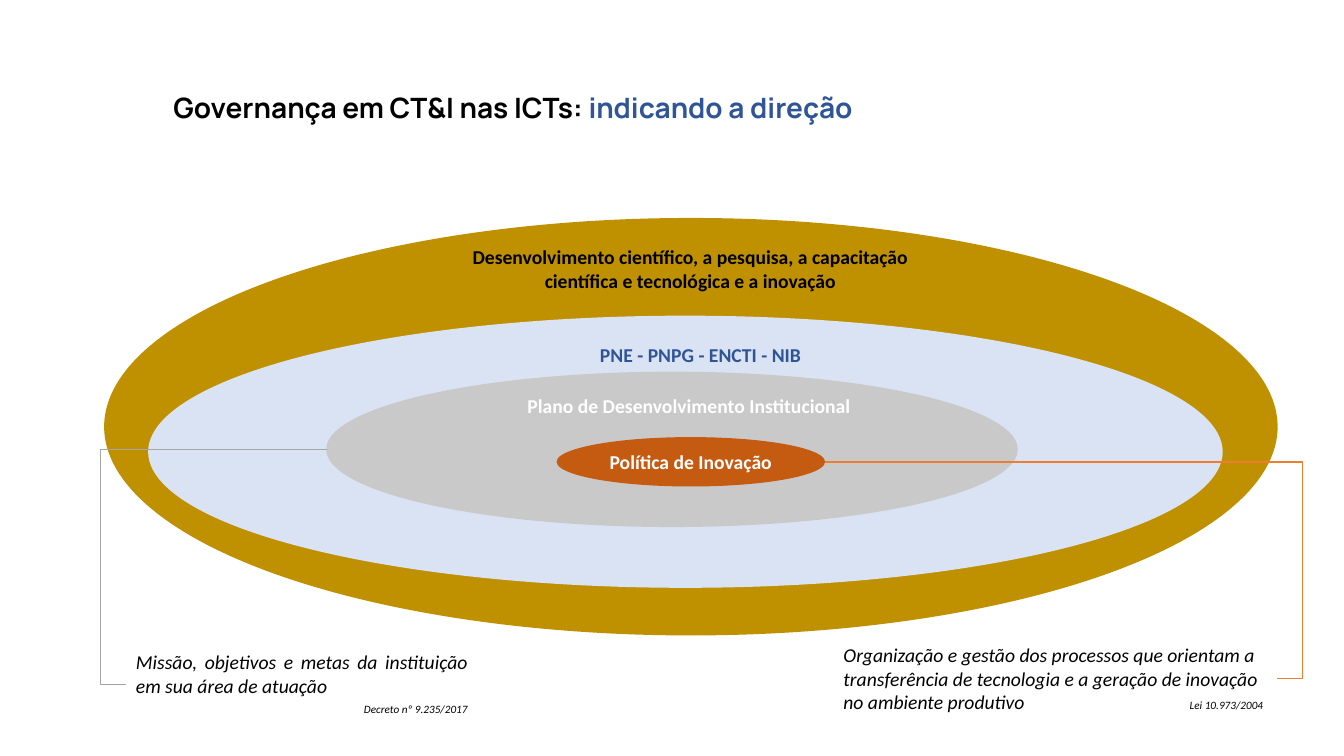
from lxml.etree import SubElement
from pptx import Presentation
from pptx.dml.color import RGBColor
from pptx.enum.shapes import MSO_CONNECTOR as Link, MSO_SHAPE as Shape
from pptx.enum.text import MSO_ANCHOR as Anchor, PP_ALIGN as Align
from pptx.oxml.ns import qn
from pptx.util import Pt


def color(hex_code):
    return RGBColor.from_string(hex_code)


def write(paragraph, runs, layout):
    for key, value in layout.items():
        setattr(paragraph, key, value)
    for words, hex_code, style in runs:
        run = paragraph.add_run()
        run.text = words
        run.font.color.rgb = color(hex_code)
        for key, value in style.items():
            setattr(run.font, key, value)


prs = Presentation()
prs.slide_width, prs.slide_height = Pt(960), Pt(540)
slide = prs.slides.add_slide(prs.slide_layouts[6])
shapes = slide.shapes

heading = {"name": "Manrope", "size": Pt(20), "bold": True}
label = {"name": "Calibri", "size": Pt(14), "bold": True}
note = {"name": "Calibri", "size": Pt(14), "italic": True}
citation = {"name": "Calibri", "size": Pt(8), "italic": True}
centered = {"alignment": Align.CENTER}
black, white, blue = "000000", "FFFFFF", "2F5597"

levels = [
    (74.4, 155.7, 838.2, 298.2, "BF9000"),
    (105.8, 225.5, 767.6, 194.4, "DAE3F3"),
    (233, 265.5, 494, 111, "C9C9C9"),
    (397.6, 312.2, 191.8, 35.3, "C55A11"),
]
for left, top, width, height, fill in levels:
    level = shapes.add_shape(Shape.OVAL, Pt(left), Pt(top), Pt(width), Pt(height))
    level.shadow.inherit = False
    level.fill.solid()
    level.fill.fore_color.rgb = color(fill)
    level.line.fill.background()

policy = level.text_frame
policy.vertical_anchor = Anchor.MIDDLE
write(policy.paragraphs[0], [("Política de Inovação", white, label)], centered)

links = [
    (233.3, 321.2, 90, 488.9, "A5A5A5", 112600),
    (589.4, 330, 912.4, 484.6, "ED7D31", 105600),
]
for x1, y1, x2, y2, stroke, bend in links:
    link = shapes.add_connector(Link.ELBOW, Pt(x1), Pt(y1), Pt(x2), Pt(y2))
    link.line.color.rgb = color(stroke)
    link.line.width = Pt(1)
    properties = link._element.spPr
    guides = properties.find(qn("a:prstGeom")).get_or_add_avLst()
    SubElement(guides, qn("a:gd"), name="adj1", fmla=f"val {bend}")
    SubElement(properties, qn("a:effectLst"))

texts = [
    (40.3, 64.1, 652.3, 43.2, [(
        [("Governança em CT&I nas ICTs: ", black, heading),
         ("indicando a direção", blue, heading)],
        {"alignment": Align.CENTER, "line_spacing": 0.9})]),
    (324, 171.4, 338.4, 41, [(
        [("Desenvolvimento científico, a pesquisa, a capacitação "
          "científica e tecnológica e a inovação", black, label)], centered)]),
    (250.6, 241.2, 499.7, 24.5, [(
        [("PNE - PNPG - ENCTI - NIB", blue, label)], centered)]),
    (366.5, 277.9, 251.3, 24.5, [(
        [("Plano de Desenvolvimento Institucional", white, label)], centered)]),
    (90, 460.8, 251.3, 54.7, [
        ([("Missão, objetivos e metas da instituição em sua área de atuação",
           black, note)],
         {"alignment": Align.JUSTIFY, "space_after": Pt(4)}),
        ([("Decreto nº 9.235/2017", black, citation)],
         {"alignment": Align.RIGHT, "space_after": Pt(4)})]),
    (595.4, 455.8, 316.8, 58.3, [(
        [("Organização e gestão dos processos que orientam a transferência de "
          "tecnologia e a geração de inovação no ambiente produtivo\t", black, note),
         ("Lei 10.973/2004", black, citation)], {"alignment": Align.LEFT})]),
]
for left, top, width, height, paragraphs in texts:
    frame = shapes.add_textbox(Pt(left), Pt(top), Pt(width), Pt(height)).text_frame
    frame.word_wrap = True
    for index, (runs, layout) in enumerate(paragraphs):
        paragraph = frame.add_paragraph() if index else frame.paragraphs[0]
        write(paragraph, runs, layout)

law_tabs = SubElement(paragraph._p.get_or_add_pPr(), qn("a:tabLst"))
SubElement(law_tabs, qn("a:tab"), pos=str(Pt(300)), algn="r")

prs.save("out.pptx")
